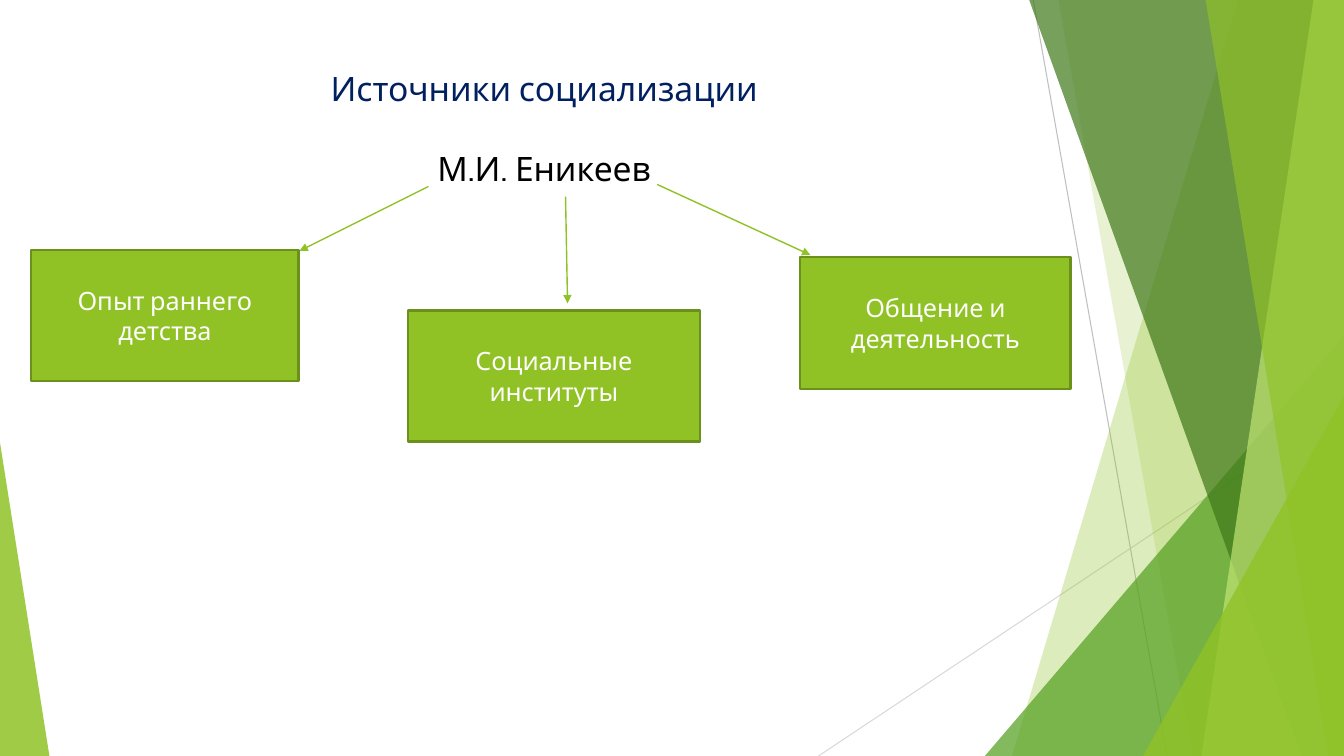
"""Build the slide on sources of socialization; lengths are percentages of the slide's sides."""
from dataclasses import dataclass
from typing import Union

import lxml.etree
import pptx
import pptx.dml.color
import pptx.enum.shapes
import pptx.enum.text
import pptx.oxml.ns
import pptx.util


@dataclass(frozen=True)
class Theme:
    font: str = "Cabin"
    title_size: int = 24
    label_size: int = 18
    green: str = "90C226"
    leaf: str = "54A021"
    forest: str = "3F7819"
    lime: str = "C0E474"
    border: str = "6B901C"
    navy: str = "002060"
    black: str = "000000"
    white: str = "FFFFFF"
    grey: str = "BFBFBF"
    pale_grey: str = "D9D9D9"


@dataclass(frozen=True)
class Facet:
    top_x: float
    bottom_x: float
    color: str
    opacity: int


@dataclass(frozen=True)
class Corner:
    left: float
    top: float
    width: float
    apex: int
    color: str
    opacity: int


@dataclass(frozen=True)
class Stroke:
    x1: float
    y1: float
    x2: float
    y2: float
    color: str
    weight: float
    arrow: bool = False


@dataclass(frozen=True)
class Source:
    label: str
    left: float
    top: float
    width: float
    height: float


THEME = Theme()
WIDTH = pptx.util.Inches(13.33)
HEIGHT = pptx.util.Inches(7.5)

BACKDROP_LINES = [
    Stroke(76.88, 0, 86.85, 100, THEME.grey, 0.75),
    Stroke(100, 53.73, 60.9, 100, THEME.pale_grey, 0.75),
]
BACKDROP: list[Union[Facet, Corner]] = [
    Facet(92.1, 75.3, THEME.green, 30),
    Facet(78.75, 88.73, THEME.green, 20),
    Corner(73.28, 44.4, 26.72, 1, THEME.leaf, 72),
    Facet(76.58, 96.83, THEME.forest, 70),
    Facet(97.73, 89.4, THEME.lime, 70),
    Facet(89.7, 98.85, THEME.green, 65),
    Corner(85.05, 52.4, 14.95, 1, THEME.green, 80),
    Corner(0, 58.53, 3.68, 0, THEME.green, 85),
]
ARROWS = [
    Stroke(31.88, 24.67, 22.28, 33.2, THEME.green, 1, True),
    Stroke(42.08, 26, 42.23, 40.13, THEME.green, 1, True),
    Stroke(48.9, 24.4, 60.3, 33.73, THEME.green, 1, True),
]
SOURCES = [
    Source("Опыт раннего детства", 2.33, 33.07, 19.88, 17.33),
    Source("Социальные институты", 30.38, 41.07, 21.68, 17.33),
    Source("Общение и деятельность", 59.55, 34, 20.1, 17.47),
]


def across(share: float) -> int:
    """Turn a percentage of the slide's width into EMU."""
    return round(WIDTH * share / 100)


def down(share: float) -> int:
    """Turn a percentage of the slide's height into EMU."""
    return round(HEIGHT * share / 100)


def rgb(color: str) -> pptx.dml.color.RGBColor:
    """Turn a hex string into a colour."""
    return pptx.dml.color.RGBColor.from_string(color)


def add_element(parent, tag: str, **attributes: str) -> None:
    """Append a drawing element to its parent."""
    lxml.etree.SubElement(parent, pptx.oxml.ns.qn(tag), attributes)


def draw_stroke(slide, stroke: Stroke) -> None:
    """Draw a straight line, with an arrowhead if it has one."""
    line = slide.shapes.add_connector(
        pptx.enum.shapes.MSO_CONNECTOR.STRAIGHT,
        across(stroke.x1), down(stroke.y1), across(stroke.x2), down(stroke.y2),
    )
    line.line.color.rgb = rgb(stroke.color)
    line.line.width = pptx.util.Pt(stroke.weight)
    if stroke.arrow:
        add_element(line.line._get_or_add_ln(), "a:tailEnd", type="triangle")
    add_element(line._element.spPr, "a:effectLst")


def draw_backdrop(slide, part: Union[Facet, Corner]) -> None:
    """Draw one translucent piece of the background."""
    if isinstance(part, Facet):
        builder = slide.shapes.build_freeform(across(part.top_x), 0)
        builder.add_line_segments(
            [(WIDTH, 0), (WIDTH, HEIGHT), (across(part.bottom_x), HEIGHT)]
        )
        piece = builder.convert_to_shape()
    else:
        piece = slide.shapes.add_shape(
            pptx.enum.shapes.MSO_SHAPE.ISOSCELES_TRIANGLE,
            across(part.left), down(part.top), across(part.width), down(100 - part.top),
        )
        piece.adjustments[0] = part.apex
    piece.shadow.inherit = False
    piece.line.fill.background()
    piece.fill.solid()
    piece.fill.fore_color.rgb = rgb(part.color)
    tint = piece._element.spPr.find(".//" + pptx.oxml.ns.qn("a:srgbClr"))
    add_element(tint, "a:alpha", val=str(part.opacity * 1000))


def style_paragraph(paragraph, size: int, color: str) -> None:
    """Centre a paragraph and format its runs."""
    paragraph.alignment = pptx.enum.text.PP_ALIGN.CENTER
    for run in paragraph.runs:
        run.font.name = THEME.font
        run.font.size = pptx.util.Pt(size)
        run.font.color.rgb = rgb(color)


def draw_heading(slide) -> None:
    """Write the title and the author's name."""
    heading = slide.shapes.add_textbox(across(5.25), down(8.27), across(70.5), down(33.47))
    frame = heading.text_frame
    frame.word_wrap = True
    frame.text = "Источники социализации\nМ.И. Еникеев"
    topic, author = frame.paragraphs
    style_paragraph(topic, THEME.title_size, THEME.navy)
    style_paragraph(author, THEME.title_size, THEME.black)
    author.space_before = pptx.util.Pt(29)


def draw_source(slide, source: Source) -> None:
    """Draw one labelled source of socialization."""
    box = slide.shapes.add_shape(
        pptx.enum.shapes.MSO_SHAPE.RECTANGLE,
        across(source.left), down(source.top), across(source.width), down(source.height),
    )
    box.shadow.inherit = False
    box.fill.solid()
    box.fill.fore_color.rgb = rgb(THEME.green)
    box.line.color.rgb = rgb(THEME.border)
    box.line.width = pptx.util.Pt(1.5)
    box.text_frame.word_wrap = True
    box.text_frame.vertical_anchor = pptx.enum.text.MSO_ANCHOR.MIDDLE
    box.text_frame.text = source.label
    style_paragraph(box.text_frame.paragraphs[0], THEME.label_size, THEME.white)


def main() -> None:
    """Assemble and save the slide."""
    deck = pptx.Presentation()
    deck.slide_width, deck.slide_height = WIDTH, HEIGHT
    slide = deck.slides.add_slide(deck.slide_layouts[6])
    for stroke in BACKDROP_LINES:
        draw_stroke(slide, stroke)
    for part in BACKDROP:
        draw_backdrop(slide, part)
    draw_heading(slide)
    for arrow in ARROWS:
        draw_stroke(slide, arrow)
    for source in SOURCES:
        draw_source(slide, source)
    deck.save("out.pptx")


if __name__ == "__main__":
    main()
